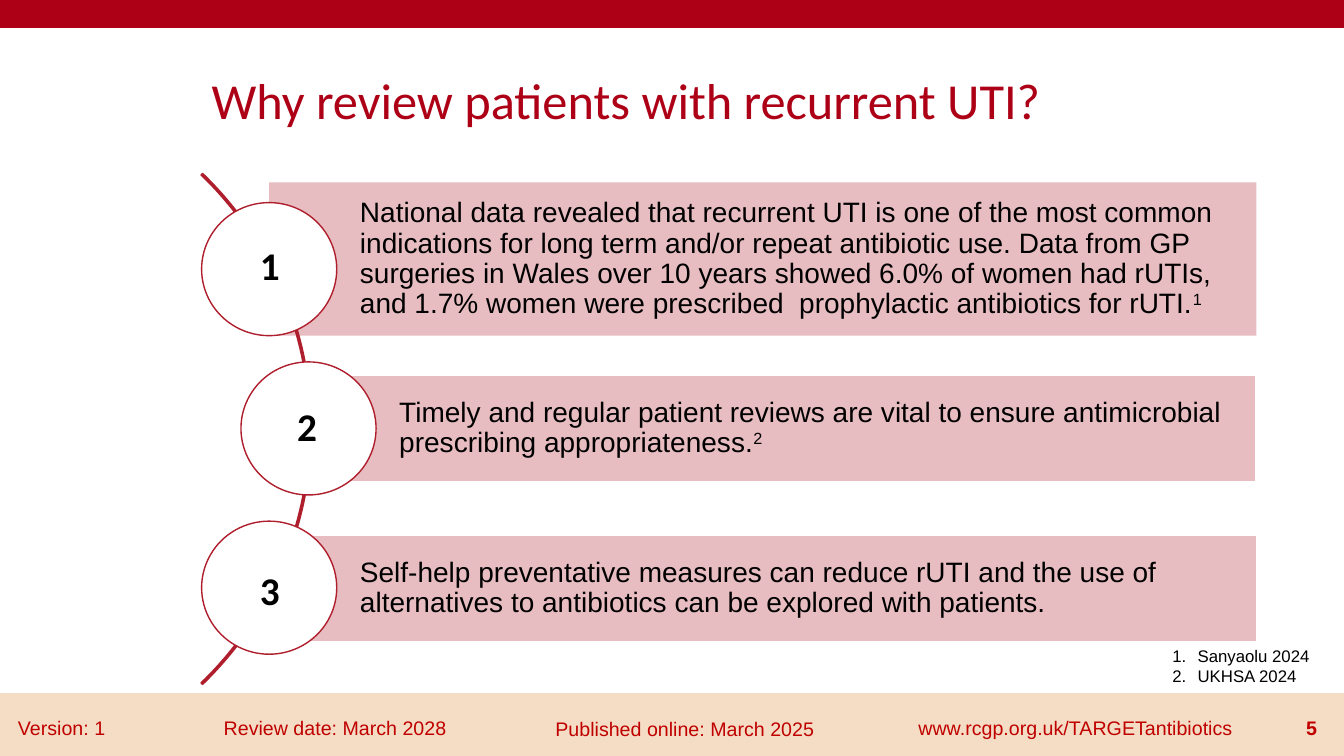
"""Build the slide on why patients with recurrent UTI are reviewed."""
from typing import NamedTuple, Optional

from lxml import etree
from pptx import Presentation
from pptx.dml.color import RGBColor
from pptx.enum.shapes import MSO_SHAPE
from pptx.enum.text import MSO_ANCHOR, PP_ALIGN
from pptx.oxml.ns import qn
from pptx.util import Inches, Pt

RECTANGLE = MSO_SHAPE.RECTANGLE
OVAL = MSO_SHAPE.OVAL
BLOCK_ARC = MSO_SHAPE.BLOCK_ARC
TOP = MSO_ANCHOR.TOP
MIDDLE = MSO_ANCHOR.MIDDLE
LEFT = PP_ALIGN.LEFT
RIGHT = PP_ALIGN.RIGHT

COLORS = {
    "title": "AD0016",
    "accent": "AF1E2C",
    "footer": "F4DDC4",
    "footer_text": "C00000",
    "white": "FFFFFF",
    "black": "000000",
}
SLIDE_WIDTH = 13.33
BANNER_RIGHT = 12.46
CIRCLE_WIDTH, CIRCLE_HEIGHT = 1.34, 1.32
CIRCLE_TOP, CIRCLE_STEP = 2.01, 1.58


class Box(NamedTuple):
    left: float
    top: float
    width: float
    height: float


class Reason(NamedTuple):
    text: str
    citation: str
    center: float
    banner_top: float
    banner_height: float
    outline: Optional[str]
    number_left: float
    number_top: float


class FooterItem(NamedTuple):
    text: str
    box: Box
    bold: bool = False
    align: PP_ALIGN = LEFT


REASONS = [
    Reason(
        "National data revealed that recurrent UTI is one of the most common indications "
        "for long term and/or repeat antibiotic use. Data from GP surgeries in Wales over "
        "10 years showed 6.0% of women had rUTIs, and 1.7% women were prescribed  "
        "prophylactic antibiotics for rUTI.",
        "1", 2.67, 1.81, 1.52, None, 2.48, 2.34),
    Reason(
        "Timely and regular patient reviews are vital to ensure antimicrobial "
        "prescribing appropriateness.",
        "2", 3.06, 3.72, 1.06, "white", 2.85, 3.94),
    Reason(
        "Self-help preventative measures can reduce rUTI and the use of alternatives "
        "to antibiotics can be explored with patients.",
        "", 2.67, 5.31, 1.06, "white", 2.48, 5.57),
]
FOOTER_ITEMS = [
    FooterItem("Version: 1", Box(0.08, 7.05, 1.16, 0.4)),
    FooterItem("Review date: March 2028", Box(2.12, 7.05, 2.78, 0.4)),
    FooterItem("Published online: March 2025", Box(5.41, 7.06, 2.92, 0.4)),
    FooterItem("www.rcgp.org.uk/TARGETantibiotics", Box(9.01, 7.05, 3.65, 0.4)),
    FooterItem("5", Box(12.58, 7.05, 0.58, 0.4), True, RIGHT),
]
REFERENCES = ["Sanyaolu 2024", "UKHSA 2024"]


def rgb(name: str) -> RGBColor:
    return RGBColor.from_string(COLORS[name])


def add_filled_shape(slide, kind, box: Box, fill: str, outline: Optional[str],
                     opacity: int = 100):
    shape = slide.shapes.add_shape(kind, *map(Inches, box))
    shape.shadow.inherit = False
    shape.fill.solid()
    shape.fill.fore_color.rgb = rgb(fill)
    if opacity < 100:
        color = shape._element.spPr.find(".//" + qn("a:srgbClr"))
        etree.SubElement(color, qn("a:alpha"), val=str(opacity * 1000))
    if outline:
        shape.line.color.rgb = rgb(outline)
        shape.line.width = Pt(1)
    else:
        shape.line.fill.background()
    return shape


def add_text_box(slide, box: Box):
    return slide.shapes.add_textbox(*map(Inches, box))


def write_text(shape, *lines: str, size: float, font: str = "Arial", color: str = "black",
               bold: bool = False, align: PP_ALIGN = LEFT, anchor: MSO_ANCHOR = TOP,
               line_spacing: Optional[float] = None, superscript: str = "",
               numbered: bool = False) -> None:
    frame = shape.text_frame
    frame.word_wrap = True
    frame.vertical_anchor = anchor
    for index, line in enumerate(lines):
        paragraph = frame.add_paragraph() if index else frame.paragraphs[0]
        if numbered:
            properties = paragraph._p.get_or_add_pPr()
            properties.set("marL", str(Inches(0.25)))
            properties.set("indent", str(Inches(-0.25)))
            etree.SubElement(properties, qn("a:buFont"), typeface="+mj-lt")
            etree.SubElement(properties, qn("a:buAutoNum"), type="arabicPeriod")
        paragraph.alignment = align
        if line_spacing:
            paragraph.line_spacing = line_spacing
        for text in filter(None, (line, superscript)):
            run = paragraph.add_run()
            run.text = text
            run.font.name = font
            run.font.size = Pt(size)
            run.font.bold = bold
            run.font.color.rgb = rgb(color)
        if superscript:
            run._r.get_or_add_rPr().set("baseline", "30000")


def add_reason(slide, index: int, reason: Reason) -> None:
    banner_box = Box(reason.center, reason.banner_top,
                     BANNER_RIGHT - reason.center, reason.banner_height)
    banner = add_filled_shape(slide, RECTANGLE, banner_box, "accent", reason.outline, 29)
    frame = banner.text_frame
    frame.margin_left = Inches(0.9)
    frame.margin_top = frame.margin_right = frame.margin_bottom = Inches(0.07)
    write_text(banner, reason.text, size=20, anchor=MIDDLE, line_spacing=0.9,
               superscript=reason.citation)
    circle_box = Box(reason.center - CIRCLE_WIDTH / 2, CIRCLE_TOP + index * CIRCLE_STEP,
                     CIRCLE_WIDTH, CIRCLE_HEIGHT)
    add_filled_shape(slide, OVAL, circle_box, "white", "accent")
    number = add_text_box(slide, Box(reason.number_left, reason.number_top, 0.47, 0.57))
    write_text(number, str(index + 1), size=28, font="Calibri", bold=True)


def main() -> None:
    presentation = Presentation()
    presentation.slide_width = Inches(SLIDE_WIDTH)
    presentation.slide_height = Inches(7.5)
    slide = presentation.slides.add_slide(presentation.slide_layouts[6])

    add_filled_shape(slide, RECTANGLE, Box(0, 6.88, SLIDE_WIDTH, 0.62), "footer", "footer")
    add_filled_shape(slide, RECTANGLE, Box(0, -0.01, SLIDE_WIDTH, 0.28), "title", "title")
    for item in FOOTER_ITEMS:
        write_text(add_text_box(slide, item.box), item.text, size=14, color="footer_text",
                   bold=item.bold, align=item.align)

    title = add_text_box(slide, Box(2, 0.51, 9.53, 1.03))
    write_text(title, "Why review patients with recurrent UTI?", size=36, font="Calibri",
               color="title", anchor=MIDDLE, line_spacing=0.9)

    arc = add_filled_shape(slide, BLOCK_ARC, Box(-4.14, 0.7, 7.23, 7.11), "accent", "accent")
    for index, value in enumerate((189, 27, 0.003)):
        arc.adjustments[index] = value
    for index, reason in enumerate(REASONS):
        add_reason(slide, index, reason)

    references = add_text_box(slide, Box(11.53, 6.36, 1.6, 0.5))
    write_text(references, *REFERENCES, size=12, numbered=True)
    presentation.save("out.pptx")


if __name__ == "__main__":
    main()
